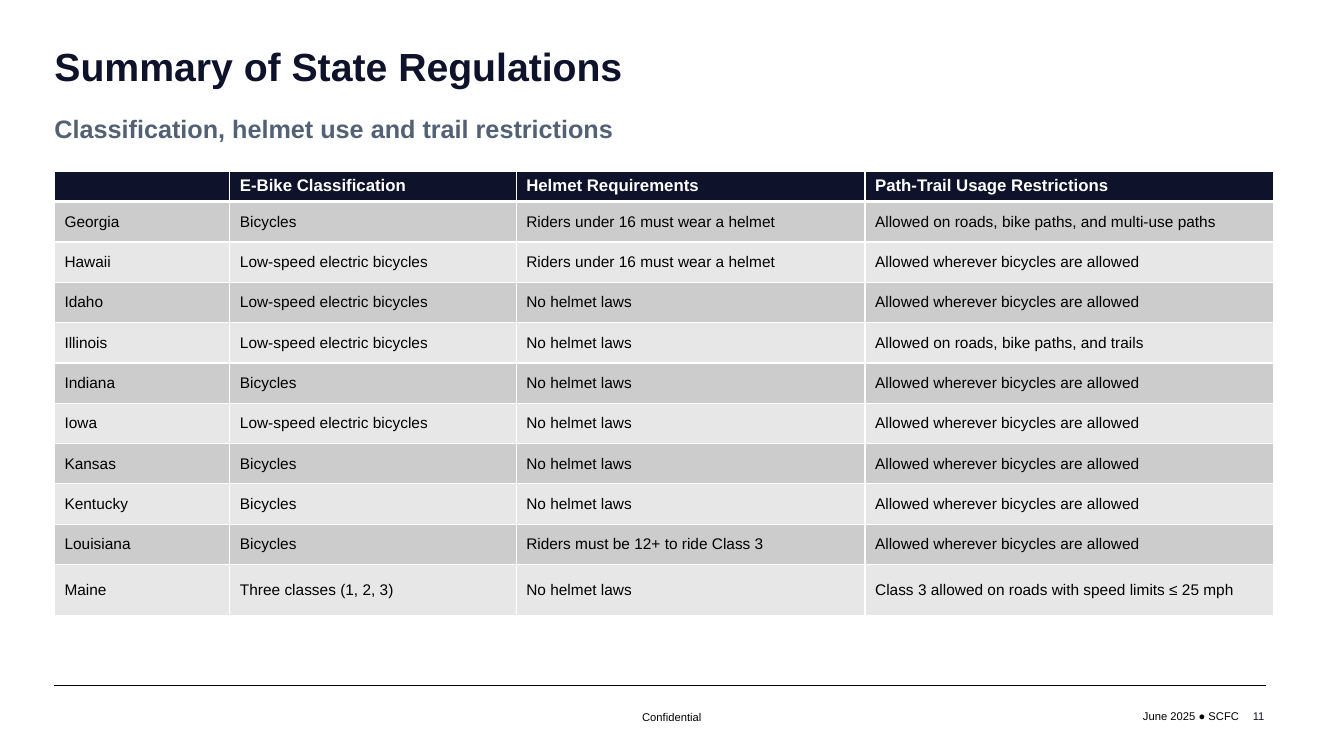
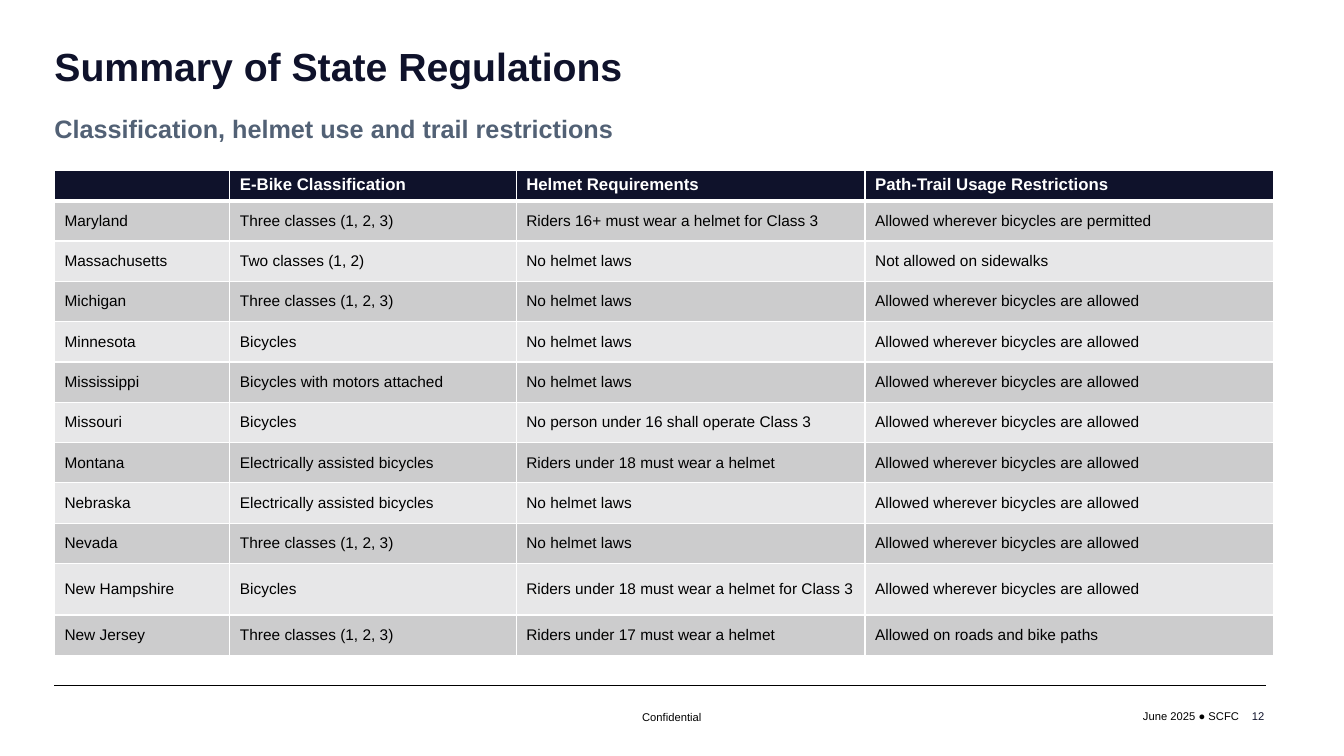
from pptx import Presentation
from pptx.dml.color import RGBColor
from pptx.enum.shapes import MSO_CONNECTOR as Connector
from pptx.enum.text import MSO_ANCHOR as Anchor, MSO_AUTO_SIZE as AutoSize, PP_ALIGN as Align
from pptx.oxml.xmlchemy import OxmlElement
from pptx.util import Inches, Pt

FONT = "Arial"
NAVY, SLATE, BLACK, WHITE = "0F122B", "526175", "000000", "FFFFFF"
BANDS = ("CCCCCD", "E7E7E8")
LEFT, WIDTH = 0.54, 12.02
COLUMN_WIDTHS = (1.74, 2.84, 3.46, 4.05)
HEADER_HEIGHT, ROW_HEIGHT, TALL_HEIGHT = 0.3, 0.4, 0.51
TITLE = "Summary of State Regulations"
SUBTITLE = "Classification, helmet use and trail restrictions"
HEADERS = ("", "E-Bike Classification", "Helmet Requirements", "Path-Trail Usage Restrictions")

BIKES = "Bicycles"
LOW_SPEED = "Low-speed electric bicycles"
ASSISTED = "Electrically assisted bicycles"
THREE = "Three classes (1, 2, 3)"
NO_HELMET = "No helmet laws"
UNDER_16 = "Riders under 16 must wear a helmet"
ALLOWED = "Allowed wherever bicycles are allowed"

GEORGIA_TO_MAINE = (
    ("Georgia", BIKES, UNDER_16, "Allowed on roads, bike paths, and multi-use paths"),
    ("Hawaii", LOW_SPEED, UNDER_16, ALLOWED),
    ("Idaho", LOW_SPEED, NO_HELMET, ALLOWED),
    ("Illinois", LOW_SPEED, NO_HELMET, "Allowed on roads, bike paths, and trails"),
    ("Indiana", BIKES, NO_HELMET, ALLOWED),
    ("Iowa", LOW_SPEED, NO_HELMET, ALLOWED),
    ("Kansas", BIKES, NO_HELMET, ALLOWED),
    ("Kentucky", BIKES, NO_HELMET, ALLOWED),
    ("Louisiana", BIKES, "Riders must be 12+ to ride Class 3", ALLOWED),
    ("Maine", THREE, NO_HELMET, "Class 3 allowed on roads with speed limits ≤ 25 mph"),
)
MARYLAND_TO_NEW_JERSEY = (
    ("Maryland", THREE, "Riders 16+ must wear a helmet for Class 3",
     "Allowed wherever bicycles are permitted"),
    ("Massachusetts", "Two classes (1, 2)", NO_HELMET, "Not allowed on sidewalks"),
    ("Michigan", THREE, NO_HELMET, ALLOWED),
    ("Minnesota", BIKES, NO_HELMET, ALLOWED),
    ("Mississippi", "Bicycles with motors attached", NO_HELMET, ALLOWED),
    ("Missouri", BIKES, "No person under 16 shall operate Class 3", ALLOWED),
    ("Montana", ASSISTED, "Riders under 18 must wear a helmet", ALLOWED),
    ("Nebraska", ASSISTED, NO_HELMET, ALLOWED),
    ("Nevada", THREE, NO_HELMET, ALLOWED),
    ("New Hampshire", BIKES, "Riders under 18 must wear a helmet for Class 3", ALLOWED),
    ("New Jersey", THREE, "Riders under 17 must wear a helmet", "Allowed on roads and bike paths"),
)


def set_color(color_format, value):
    """Apply a hex colour to a font, fill or line colour."""
    color_format.rgb = RGBColor.from_string(value)


def write_text(frame, text, size=8, color=BLACK, bold=False, align=Align.LEFT):
    """Write one formatted paragraph into a text frame."""
    paragraph = frame.paragraphs[0]
    paragraph.alignment = align
    if not text:
        paragraph._p.get_or_add_endParaRPr().set("sz", str(size * 100))
        return
    run = paragraph.add_run()
    run.text = text
    run.font.name, run.font.size, run.font.bold = FONT, Pt(size), bold
    set_color(run.font.color, color)


def add_text(slide, box, text, margins=(0.1, 0.05), anchor=Anchor.TOP, wrap=True, **text_format):
    """Place a text box with horizontal and vertical margins."""
    frame = slide.shapes.add_textbox(*map(Inches, box)).text_frame
    frame.word_wrap = wrap
    frame.auto_size = AutoSize.NONE if wrap else AutoSize.SHAPE_TO_FIT_TEXT
    frame.vertical_anchor = anchor
    frame.margin_left = frame.margin_right = Inches(margins[0])
    frame.margin_top = frame.margin_bottom = Inches(margins[1])
    write_text(frame, text, **text_format)


def add_heading(slide, left, top, width):
    """Place the title and subtitle."""
    add_text(slide, (left, top, width, 0.63), TITLE, margins=(0, 0), size=28, color=NAVY, bold=True)
    add_text(slide, (left, top + 0.65, 6.12, 0.4), SUBTITLE, margins=(0, 0.05),
             anchor=Anchor.MIDDLE, size=18, color=SLATE, bold=True)


def add_footer(slide, left, top, width, number):
    """Place the footer rule, labels and page number."""
    rule = slide.shapes.add_connector(
        Connector.STRAIGHT, Inches(left), Inches(top), Inches(left + width), Inches(top))
    rule.line.width = Pt(1)
    set_color(rule.line.color, BLACK)
    rule._element.spPr.append(OxmlElement("a:effectLst"))
    right = left + width
    add_text(slide, (right - 1.37, top + 0.19, 1.2, 0.24), "June 2025 ● SCFC",
             wrap=False, align=Align.RIGHT)
    add_text(slide, (left + 5.73, top + 0.2, 0.8, 0.24), "Confidential", wrap=False)
    add_text(slide, (right - 2.92, top + 0.1, 3, 0.4), str(number),
             anchor=Anchor.MIDDLE, color=NAVY, align=Align.RIGHT)


def set_borders(cell, **widths):
    """Give a cell white borders, with widths in points by side."""
    properties = cell._tc.get_or_add_tcPr()
    for side in "LRTB":
        line = OxmlElement(f"a:ln{side}")
        line.set("w", str(Pt(widths.get(side, 1))))
        fill, color = OxmlElement("a:solidFill"), OxmlElement("a:srgbClr")
        color.set("val", WHITE)
        fill.append(color)
        line.append(fill)
        properties.append(line)


def format_cell(cell, text, row):
    """Fill a header or body cell according to its row."""
    header = row == 0
    set_borders(cell, T=3 if row == 1 else 1, B=3 if header else 1)
    cell.fill.solid()
    set_color(cell.fill.fore_color, NAVY if header else BANDS[(row - 1) % 2])
    cell.vertical_anchor = Anchor.TOP if header else Anchor.MIDDLE
    cell.margin_left = cell.margin_right = Inches(0.1)
    cell.margin_top = cell.margin_bottom = Inches(0.05 if header else 0.1)
    write_text(cell.text_frame, text, size=12 if header else 11,
               color=WHITE if header else BLACK, bold=header)


def add_state_table(slide, left, top, states, tall_state):
    """Place the table of states, one of them in a taller row."""
    rows = (HEADERS, *states)
    heights = [HEADER_HEIGHT] + [TALL_HEIGHT if state[0] == tall_state else ROW_HEIGHT
                                 for state in states]
    box = (left, top, sum(COLUMN_WIDTHS), sum(heights))
    table = slide.shapes.add_table(len(rows), len(HEADERS), *map(Inches, box)).table
    table.horz_banding = False
    for column, width in zip(table.columns, COLUMN_WIDTHS):
        column.width = Inches(width)
    for row, (texts, height) in enumerate(zip(rows, heights)):
        table.rows[row].height = Inches(height)
        for column, text in enumerate(texts):
            format_cell(table.cell(row, column), text, row)


def add_state_slide(presentation, number, table_top, states, tall_state):
    """Add one slide of state regulations."""
    slide = presentation.slides.add_slide(presentation.slide_layouts[6])
    add_footer(slide, LEFT, 6.8, WIDTH, number)
    add_state_table(slide, LEFT, table_top, states, tall_state)
    add_heading(slide, LEFT, 0.42, WIDTH)


def main():
    """Build and save the presentation."""
    presentation = Presentation()
    presentation.slide_width, presentation.slide_height = Inches(13.33), Inches(7.5)
    add_state_slide(presentation, 11, 1.7, GEORGIA_TO_MAINE, "Maine")
    add_state_slide(presentation, 12, 1.69, MARYLAND_TO_NEW_JERSEY, "New Hampshire")
    presentation.save("out.pptx")


if __name__ == "__main__":
    main()
